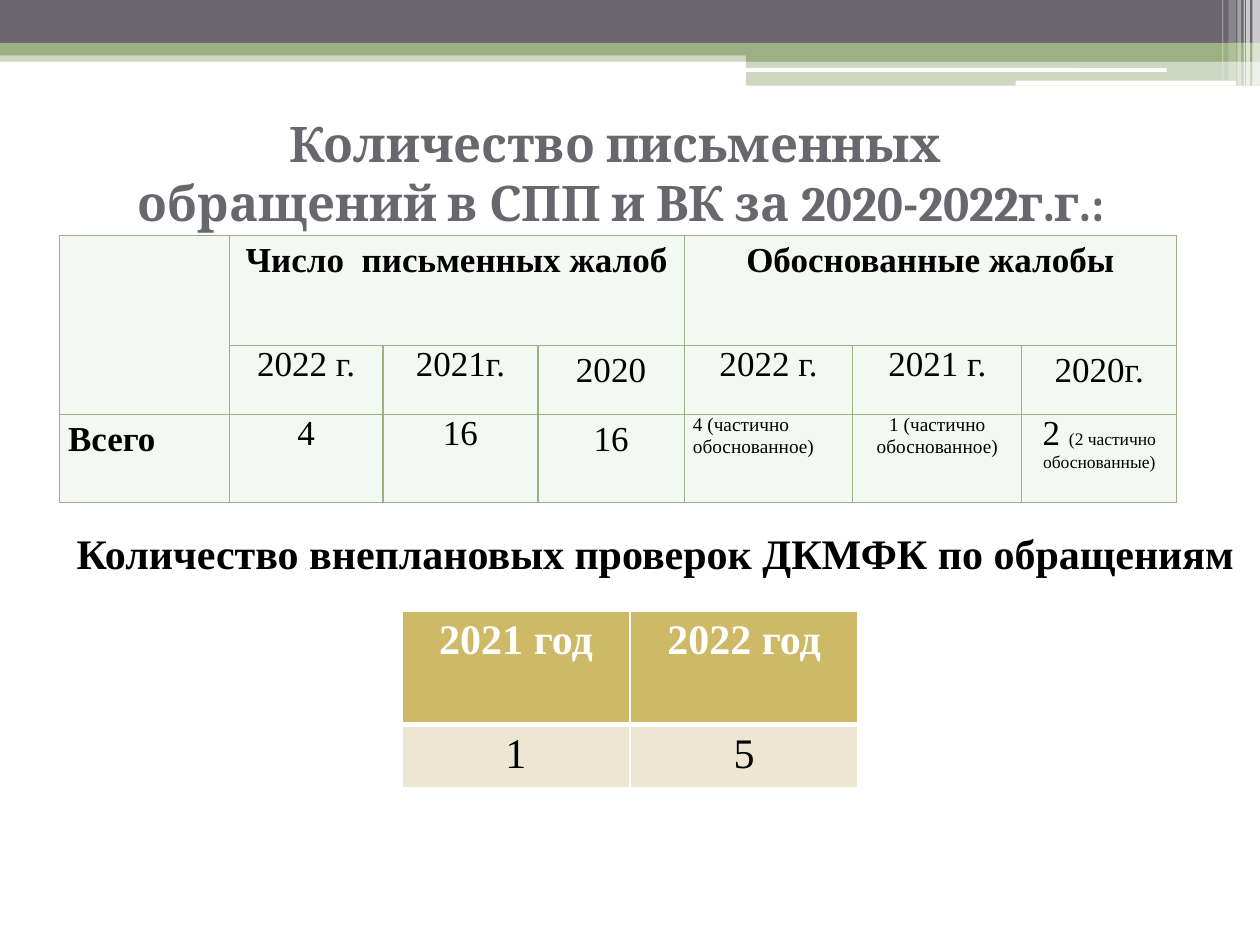
from lxml import etree
from pptx import Presentation
from pptx import util as u
from pptx.dml.color import RGBColor
from pptx.enum import shapes, text
from pptx.oxml import ns

HUE = {"gray": "69676D", "green": "9CB084", "pale": "F4F8F2", "gold": "CEB966",
       "sand": "EDE6D3", "white": "FFFFFF", "black": "000000"}
ALIGN = {"c": text.PP_ALIGN.CENTER, "l": text.PP_ALIGN.LEFT, "j": text.PP_ALIGN.JUSTIFY}
RECT, ROUND = shapes.MSO_SHAPE.RECTANGLE, shapes.MSO_SHAPE.ROUNDED_RECTANGLE

# left, top, width, height, colour, opacity in percent
BANDS = [
    (0, 0.4, 10, 0.09, "green", 50),
    (0, 0, 10, 0.34, "gray", 100),
    (0, 0.34, 10, 0.1, "green", 100),
    (5.92, 0.39, 4.08, 0.1, "green", 100),
    (5.92, 0.48, 4.08, 0.2, "green", 50),
]
PILLS = [(5.91, 0.54, 3.35, 0.03), (8.06, 0.64, 1.75, 0.04)]
# left, width, height, opacity in percent
STRIPES = [(9.94, 0.06, 0.68, 65), (9.89, 0.03, 0.68, 65), (9.87, 0.01, 0.68, 60),
           (9.82, 0.03, 0.68, 40), (9.75, 0.06, 0.64, 20), (9.7, 0.01, 0.64, 30)]

TITLE = "Количество письменных \vобращений в СПП и ВК за 2020-2022г.г.:"
CHECKS = "Количество внеплановых проверок ДКМФК по обращениям"

BOLD, LOOSE, SMALL = {"bold": True}, {"gap": 1.15}, {"size": 11}
HEAD = BOLD | LOOSE
# row, column, text parts, format
LETTERS = [
    (0, 1, "Число  письменных жалоб", HEAD),
    (0, 4, "Обоснованные жалобы", HEAD),
    (1, 1, "2022 г.", {}),
    (1, 2, "2021г.", {}),
    (1, 3, "2020", LOOSE),
    (1, 4, "2022 г.", {}),
    (1, 5, "2021 г.", {}),
    (1, 6, "2020г.", LOOSE),
    (2, 0, "Всего", HEAD | {"align": "j"}),
    (2, 1, "4", {}),
    (2, 2, "16", {}),
    (2, 3, "16", LOOSE),
    (2, 4, "4 (частично обоснованное)", SMALL | {"align": "l"}),
    (2, 5, "1 (частично обоснованное)", SMALL),
    (2, 6, "2 ", {"tail": ("(2 частично обоснованные)", 10)}),
]
SPANS = [((0, 0), (1, 0)), ((0, 1), (0, 3)), ((0, 4), (0, 6))]
YEARS = [("2021 год", "2022 год"), ("1", "5")]


def rgb(name):
    return RGBColor.from_string(HUE[name])


def write(frame, words, size=20, color="black", bold=False, align="c",
          font="Times New Roman", gap=None, tail=None):
    """Fill the frame's one paragraph; tail is an extra (text, size) run."""
    para = frame.paragraphs[0]
    para.alignment = ALIGN[align]
    if gap:
        para.line_spacing = gap
    para.text = words
    if tail:
        para.add_run().text = tail[0]
    for i, run in enumerate(para.runs):
        face = run.font
        face.name, face.bold = font, bold
        face.size = u.Pt(tail[1] if tail and i else size)
        face.color.rgb = rgb(color)


def label(box, words, pad=None, **look):
    frame = slide.shapes.add_textbox(*map(u.Inches, box)).text_frame
    frame.word_wrap = True
    if pad is not None:
        frame.margin_top = frame.margin_bottom = u.Inches(pad)
        frame.vertical_anchor = text.MSO_ANCHOR.MIDDLE
    write(frame, words, **look)


def block(kind, box, color, alpha=100):
    shape = slide.shapes.add_shape(kind, *map(u.Inches, box))
    shape.shadow.inherit = False
    shape.line.fill.background()
    shape.fill.solid()
    shape.fill.fore_color.rgb = rgb(color)
    if alpha < 100:
        tone = shape.fill._xPr.find(".//" + ns.qn("a:srgbClr"))
        etree.SubElement(tone, ns.qn("a:alpha"), val=str(alpha * 1000))


def grid(left, top, cols, rows):
    frame = slide.shapes.add_table(len(rows), len(cols), *map(
        u.Inches, (left, top, sum(cols), sum(rows))))
    table = frame.table
    table.first_row = table.horz_banding = False
    for col, wide in zip(table.columns, cols):
        col.width = u.Inches(wide)
    for row, high in zip(table.rows, rows):
        row.height = u.Inches(high)
    return table


def paint(cell, fill, edge, wide, base=None):
    """Draw the four borders, the bottom one base points thick, then the fill."""
    props = cell._tc.get_or_add_tcPr()
    for side in "LRTB":
        pts = base if base and side == "B" else wide
        line = etree.SubElement(props, ns.qn("a:ln" + side), w=str(u.Pt(pts)))
        solid = etree.SubElement(line, ns.qn("a:solidFill"))
        etree.SubElement(solid, ns.qn("a:srgbClr"), val=HUE[edge])
    cell.fill.solid()
    cell.fill.fore_color.rgb = rgb(fill)


deck = Presentation()
deck.slide_width, deck.slide_height = u.Inches(10), u.Inches(7.5)
slide = deck.slides.add_slide(deck.slide_layouts[6])

for *box, color, alpha in BANDS:
    block(RECT, box, color, alpha)
for box in PILLS:
    block(ROUND, box, "white")
for left, wide, high, alpha in STRIPES:
    block(RECT, (left, 0, wide, high), "white", alpha)

label((0.43, 0.87, 9, 1), TITLE, pad=0, size=28, color="gray", bold=True, font="Cambria")

letters = grid(0.47, 1.87, [1.35, 1.22, 1.23, 1.16, 1.34, 1.34, 1.23], [0.87, 0.55, 0.7])
for cell in letters.iter_cells():
    cell.margin_left = cell.margin_right = u.Inches(0.07)
    cell.margin_top = cell.margin_bottom = 0
    paint(cell, "pale", "green", 0.75)
for first, last in SPANS:
    letters.cell(*first).merge(letters.cell(*last))
for row, col, words, look in LETTERS:
    write(letters.cell(row, col).text_frame, words, **look)

label((0.51, 4.14, 9.49, 0.5), CHECKS, size=24, bold=True, align="l")

years = grid(3.19, 4.85, [1.81] * 2, [0.9, 0.41])
for r, line in enumerate(YEARS):
    fill, color, base = [("gold", "white", 3), ("sand", "black", 1)][r]
    for c, words in enumerate(line):
        cell = years.cell(r, c)
        paint(cell, fill, "white", 1, base)
        if r:
            paint_top = cell._tc.tcPr.find(ns.qn("a:lnT"))
            paint_top.set("w", str(u.Pt(3)))
        write(cell.text_frame, words, size=24, color=color, bold=r == 0)

deck.save("out.pptx")
